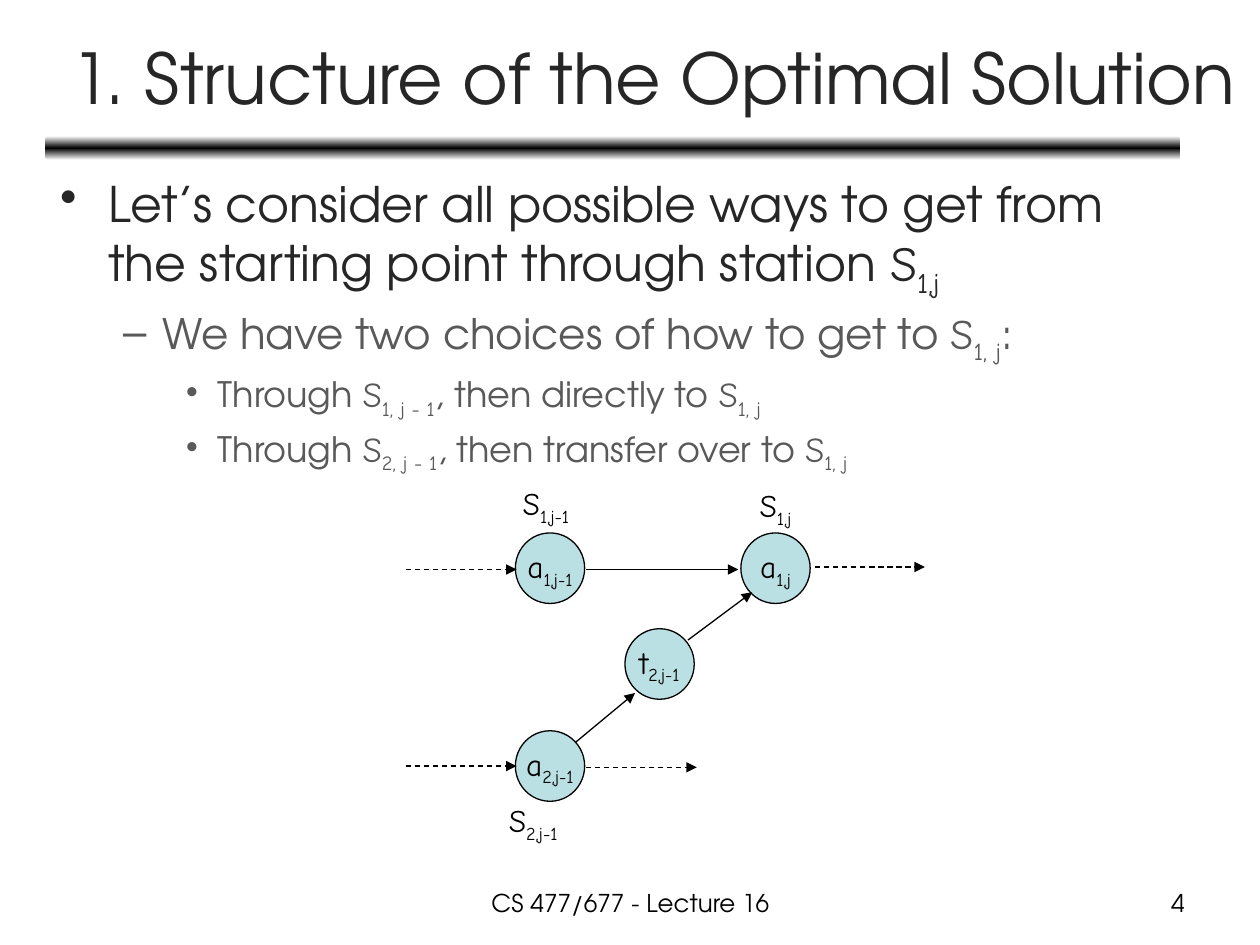
from copy import deepcopy

from lxml import etree
from pptx import Presentation
from pptx.dml.color import RGBColor
from pptx.enum import dml, shapes, text
from pptx.oxml.ns import qn
from pptx.util import Inches, Pt

MAIN_FONT = "TeX Gyre Adventor"
SYMBOL_FONT = "Comic Neue"
BLACK, DARK, GREY, TEAL = "000000", "262626", "595959", "BBE0E3"

TITLE = "1. Structure of the Optimal Solution"
FOOTER = "CS 477/677 - Lecture 16"
PAGE = "4"
BODY = [
    (0, "Let’s consider all possible ways to get from the starting point through station `S|1,j`"),
    (1, "We have two choices of how to get to `S|1, j`:"),
    (2, "Through `S|1, j - 1`, then directly to `S|1, j`"),
    (2, "Through `S|2, j - 1`, then transfer over to `S|1, j`"),
]
LEVELS = [
    dict(size=28, color=DARK, bullet="•", margin=0.38, indent=-0.38),
    dict(size=24, color=GREY, bullet="–", margin=0.81, indent=-0.31),
    dict(size=20, color=GREY, bullet="•", margin=1.25, indent=-0.25),
]
NODE_SIZE = (0.55, 0.56)
NODES = [
    ("`a|1,j`", 5.88, 4.23),
    ("`a|1,j-1`", 4.09, 4.23),
    ("`a|2,j-1`", 4.09, 5.8),
    ("`t|2,j-1`", 4.96, 4.99),
]
STATION_LABELS = [
    ("`S|1,j`", 5.93, 3.81, 0.56),
    ("`S|1,j-1`", 4.05, 3.79, 0.71),
    ("`S|2,j-1`", 3.94, 6.31, 0.74),
]
ARROWS = [
    ((3.22, 4.52), (4.1, 4.52), True),
    ((3.22, 6.08), (4.1, 6.08), True),
    ((4.65, 4.52), (5.86, 4.52), False),
    ((4.57, 5.89), (5.04, 5.5), False),
    ((5.46, 5.08), (5.97, 4.7), False),
    ((6.47, 4.5), (7.34, 4.5), True),
    ((4.65, 6.09), (5.53, 6.09), True),
]


def rgb(value):
    return RGBColor.from_string(value)


def add_run(paragraph, content, font, size, color, subscript=False):
    run = paragraph.add_run()
    run.text = content
    run.font.name = font
    run.font.size = Pt(size)
    run.font.color.rgb = rgb(color)
    if subscript:
        run._r.get_or_add_rPr().set("baseline", "-25000")


def write(paragraph, content, size=18, color=BLACK, align="LEFT", before=0,
          bullet=None, margin=0, indent=0):
    paragraph.alignment = getattr(text.PP_ALIGN, align)
    paragraph.space_before = Pt(before)
    if bullet:
        properties = paragraph._p.get_or_add_pPr()
        properties.set("marL", str(Inches(margin)))
        properties.set("indent", str(Inches(indent)))
        etree.SubElement(properties, qn("a:buChar"), char=bullet)
    for index, part in enumerate(content.split("`")):
        if index % 2:
            letter, subscript = part.split("|")
            add_run(paragraph, letter, SYMBOL_FONT, size, color)
            add_run(paragraph, subscript, SYMBOL_FONT, size, color, subscript=True)
        elif part:
            add_run(paragraph, part, MAIN_FONT, size, color)


def add_text(slide, box, content, wrap=True, anchor="TOP", **style):
    frame = slide.shapes.add_textbox(*map(Inches, box)).text_frame
    frame.word_wrap = wrap
    frame.vertical_anchor = getattr(text.MSO_ANCHOR, anchor)
    write(frame.paragraphs[0], content, **style)


def add_title_bar(slide):
    bar = slide.shapes.add_shape(shapes.MSO_SHAPE.ROUNDED_RECTANGLE,
                                 *map(Inches, (0.36, 1.08, 9.01, 0.19)))
    bar.shadow.inherit = False
    bar.line.fill.background()
    bar.fill.gradient()
    first_stop = bar._element.spPr.find(".//" + qn("a:gs"))
    first_stop.addnext(deepcopy(first_stop))
    for stop, color, position in zip(bar.fill.gradient_stops, ("FFFFFF", BLACK, "FFFFFF"), (0, 0.5, 1)):
        stop.color.rgb = rgb(color)
        stop.position = position
    bar.fill.gradient_angle = 90


def add_body(slide):
    frame = slide.shapes.add_textbox(*map(Inches, (0.38, 1.33, 9.06, 5.55))).text_frame
    frame.word_wrap = True
    for index, (level, content) in enumerate(BODY):
        paragraph = frame.add_paragraph() if index else frame.paragraphs[0]
        paragraph.level = level
        style = LEVELS[level]
        write(paragraph, content, before=style["size"] * 0.2, **style)


def add_node(slide, content, left, top):
    node = slide.shapes.add_shape(shapes.MSO_SHAPE.OVAL, *map(Inches, (left, top, *NODE_SIZE)))
    node.shadow.inherit = False
    node.fill.solid()
    node.fill.fore_color.rgb = rgb(TEAL)
    node.line.color.rgb = rgb(BLACK)
    node.line.width = Pt(0.75)
    node.text_frame.word_wrap = False
    node.text_frame.vertical_anchor = text.MSO_ANCHOR.MIDDLE
    write(node.text_frame.paragraphs[0], content, align="CENTER")


def add_arrow(slide, start, end, dashed):
    arrow = slide.shapes.add_connector(shapes.MSO_CONNECTOR.STRAIGHT, *map(Inches, start + end))
    arrow.line.color.rgb = rgb(BLACK)
    arrow.line.width = Pt(0.75)
    if dashed:
        arrow.line.dash_style = dml.MSO_LINE.DASH
    etree.SubElement(arrow.line._get_or_add_ln(), qn("a:tailEnd"), type="triangle")
    etree.SubElement(arrow._element.spPr, qn("a:effectLst"))


def main():
    presentation = Presentation()
    presentation.slide_width = Inches(10)
    presentation.slide_height = Inches(7.5)
    slide = presentation.slides.add_slide(presentation.slide_layouts[6])
    add_title_bar(slide)
    add_text(slide, (0.37, 0.11, 9.63, 0.99), TITLE, anchor="MIDDLE",
             size=40, color=DARK, align="CENTER")
    add_body(slide)
    for node in NODES:
        add_node(slide, *node)
    for content, left, top, width in STATION_LABELS:
        add_text(slide, (left, top, width, 0.4), content, wrap=False)
    for arrow in ARROWS:
        add_arrow(slide, *arrow)
    add_text(slide, (3.42, 7, 3.17, 0.35), FOOTER, size=14, align="CENTER")
    add_text(slide, (7.17, 7, 2.33, 0.35), PAGE, size=14, align="RIGHT")
    presentation.save("out.pptx")


if __name__ == "__main__":
    main()
